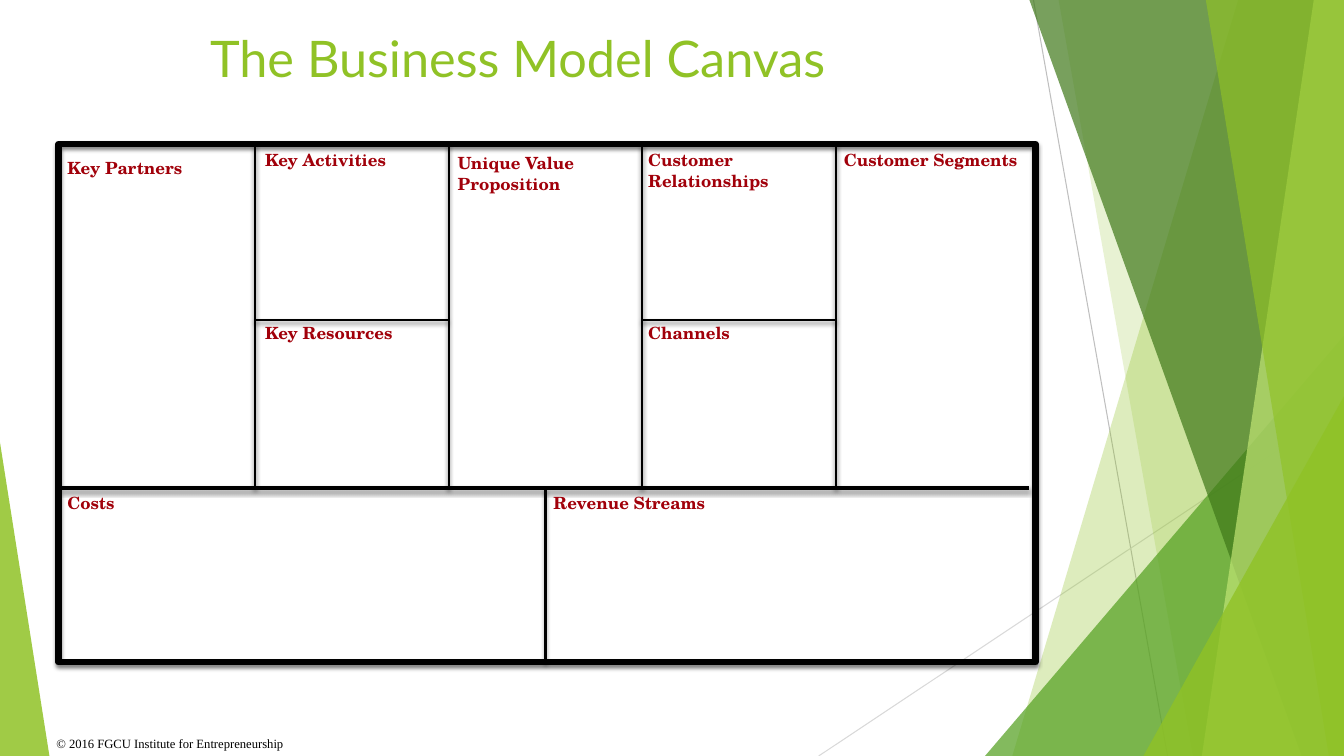
from collections import namedtuple
from dataclasses import dataclass

from lxml.etree import SubElement
from pptx import Presentation
from pptx.dml.color import RGBColor
from pptx.enum.shapes import MSO_CONNECTOR as Connector, MSO_SHAPE as Shape
from pptx.enum.text import MSO_ANCHOR as Anchor, MSO_AUTO_SIZE as AutoSize, PP_ALIGN as Align
from pptx.oxml.ns import qn
from pptx.util import Inches, Pt

Box = namedtuple("Box", "left top width height")
PAGE = Box(0, 0, 13.33, 7.5)


@dataclass(frozen=True)
class Theme:
    lime: str = "90C226"
    pale_lime: str = "C0E474"
    green: str = "54A021"
    forest: str = "3F7819"
    grey: str = "BFBFBF"
    light_grey: str = "D9D9D9"
    black: str = "000000"
    red: str = "A1000A"
    title_font: str = "Lato"
    label_font: str = "TeX Gyre Schola"
    credit_font: str = "Times New Roman"
    title_size: float = 36
    label_size: float = 12
    credit_size: float = 9
    frame_line: float = 4.5
    divider_line: float = 3
    cell_line: float = 1.5
    hairline: float = 0.75


THEME = Theme()
TITLE_FORMAT = {"name": THEME.title_font, "size": Pt(THEME.title_size), "color": THEME.lime}
LABEL_FORMAT = {"name": THEME.label_font, "size": Pt(THEME.label_size),
                "color": THEME.red, "bold": True}
CREDIT_FORMAT = {"name": THEME.credit_font, "size": Pt(THEME.credit_size), "color": THEME.black}

# Colour, opacity in percent, corner points in inches
SHARDS = [
    (THEME.lime, 30, [(12.28, 0), (13.33, 0), (13.33, 7.5), (10.04, 7.5)]),
    (THEME.lime, 20, [(10.5, 0), (13.33, 0), (13.33, 7.5), (11.83, 7.5)]),
    (THEME.green, 72, [(9.77, 7.5), (13.33, 3.33), (13.33, 7.5)]),
    (THEME.forest, 70, [(10.21, 0), (13.33, 0), (13.33, 7.5), (12.91, 7.5)]),
    (THEME.pale_lime, 70, [(13.03, 0), (13.33, 0), (13.33, 7.5), (11.92, 7.5)]),
    (THEME.lime, 65, [(11.96, 0), (13.33, 0), (13.33, 7.5), (13.18, 7.5)]),
    (THEME.lime, 80, [(11.34, 7.5), (13.33, 3.93), (13.33, 7.5)]),
    (THEME.lime, 85, [(0, 7.5), (0, 4.39), (0.49, 7.5)]),
]
RAYS = [
    (THEME.grey, (10.25, 0), (11.58, 7.5)),
    (THEME.light_grey, (13.33, 4.03), (8.12, 7.5)),
]

COLUMN = 1.92
ROW_SHARES = (0, 0.34, 0.664, 1)
# Start column, start row, end column, end row, weight
DIVIDERS = [
    *[(column, 0, column, 2, THEME.cell_line) for column in range(1, 5)],
    *[(column, 1, column + 1, 1, THEME.cell_line) for column in (1, 3)],
    (0, 2, 5, 2, THEME.divider_line),
    (2.5, 2, 2.5, 3, THEME.cell_line),
]
# Text, column, row, offset from the cell's corner
LABELS = [
    ("Key Partners", 0, 0, -0.04, 0.09),
    ("Key Activities", 1, 0, 0, 0.01),
    ("Unique Value Proposition", 2, 0, -0.01, 0.04),
    ("Customer\nRelationships", 3, 0, -0.04, 0.01),
    ("Customer Segments", 4, 0, -0.02, 0.01),
    ("Key Resources", 1, 1, 0, -0.02),
    ("Channels", 3, 1, -0.04, -0.02),
    ("Costs", 0, 2, -0.04, 0),
    ("Revenue Streams", 2.5, 2, -0.02, 0),
]


def inches(values):
    return [Inches(value) for value in values]


def set_font(frame, font_format):
    for para in frame.paragraphs:
        for name, value in font_format.items():
            if name == "color":
                para.font.color.rgb = RGBColor.from_string(value)
            else:
                setattr(para.font, name, value)


def set_line(shape, color, weight, shadowed):
    """Style the outline and replace the inherited shadow."""
    shape.line.color.rgb = RGBColor.from_string(color)
    shape.line.width = Pt(weight)
    effects = SubElement(shape._element.spPr, qn("a:effectLst"))
    if shadowed:
        shadow = SubElement(effects, qn("a:outerShdw"), blurRad=str(Pt(3)), dist=str(Pt(2)),
                            dir="5400000", rotWithShape="0")
        tint = SubElement(shadow, qn("a:srgbClr"), val=THEME.black)
        SubElement(tint, qn("a:alpha"), val="50000")


def add_line(slide, start, end, color, weight, shadowed=False):
    line = slide.shapes.add_connector(Connector.STRAIGHT, *inches(start + end))
    set_line(line, color, weight, shadowed)


def add_text(slide, box, text, font_format, wrap=True):
    frame = slide.shapes.add_textbox(*inches(box)).text_frame
    frame.word_wrap = wrap
    frame.text = text
    set_font(frame, font_format)


def add_shard(slide, color, opacity, points):
    start, *rest = [tuple(inches(point)) for point in points]
    builder = slide.shapes.build_freeform(*start)
    builder.add_line_segments(rest, close=True)
    shard = builder.convert_to_shape()
    shard.shadow.inherit = False
    shard.line.fill.background()
    shard.fill.solid()
    shard.fill.fore_color.rgb = RGBColor.from_string(color)
    tint = shard._element.spPr.find(qn("a:solidFill"))[0]
    SubElement(tint, qn("a:alpha"), val=str(opacity * 1000))


def add_backdrop(slide):
    for color, start, end in RAYS:
        add_line(slide, start, end, color, THEME.hairline)
    for shard in SHARDS:
        add_shard(slide, *shard)


def set_title(slide, box, text):
    title = slide.shapes.title
    title.left, title.top, title.width, title.height = inches(box)
    frame = title.text_frame
    frame.text = text
    margins = {f"margin_{side}": Inches(0.05) for side in ("left", "top", "right", "bottom")}
    layout = {"vertical_anchor": Anchor.TOP, "auto_size": AutoSize.NONE, "word_wrap": True}
    for name, value in {**margins, **layout}.items():
        setattr(frame, name, value)
    frame.paragraphs[0].alignment = Align.CENTER
    set_font(frame, TITLE_FORMAT)


def add_canvas(slide, box):
    def corner(column, row):
        return (box.left + 0.03 + column * COLUMN, box.top + ROW_SHARES[row] * box.height)

    border = slide.shapes.add_shape(Shape.RECTANGLE, *inches(box))
    border.fill.background()
    set_line(border, THEME.black, THEME.frame_line, shadowed=True)
    for column, row, end_column, end_row, weight in DIVIDERS:
        add_line(slide, corner(column, row), corner(end_column, end_row),
                 THEME.black, weight, shadowed=True)
    for text, column, row, right, down in LABELS:
        left, top = corner(column, row)
        add_text(slide, Box(left + right, top + down, COLUMN, 0.3 + 0.2 * text.count("\n")),
                 text, LABEL_FORMAT)


def main():
    deck = Presentation()
    deck.slide_width, deck.slide_height = inches((PAGE.width, PAGE.height))
    slide = deck.slides.add_slide(deck.slide_layouts[5])
    add_backdrop(slide)
    set_title(slide, Box(0, 0.22, 10.27, 1.44), "The Business Model Canvas")
    add_canvas(slide, Box(0.58, 1.43, 9.69, 5.14))
    add_text(slide, Box(0.46, 7.25, 2.48, 0.25),
             "© 2016 FGCU Institute for Entrepreneurship", CREDIT_FORMAT, wrap=False)
    deck.save("out.pptx")


if __name__ == "__main__":
    main()
